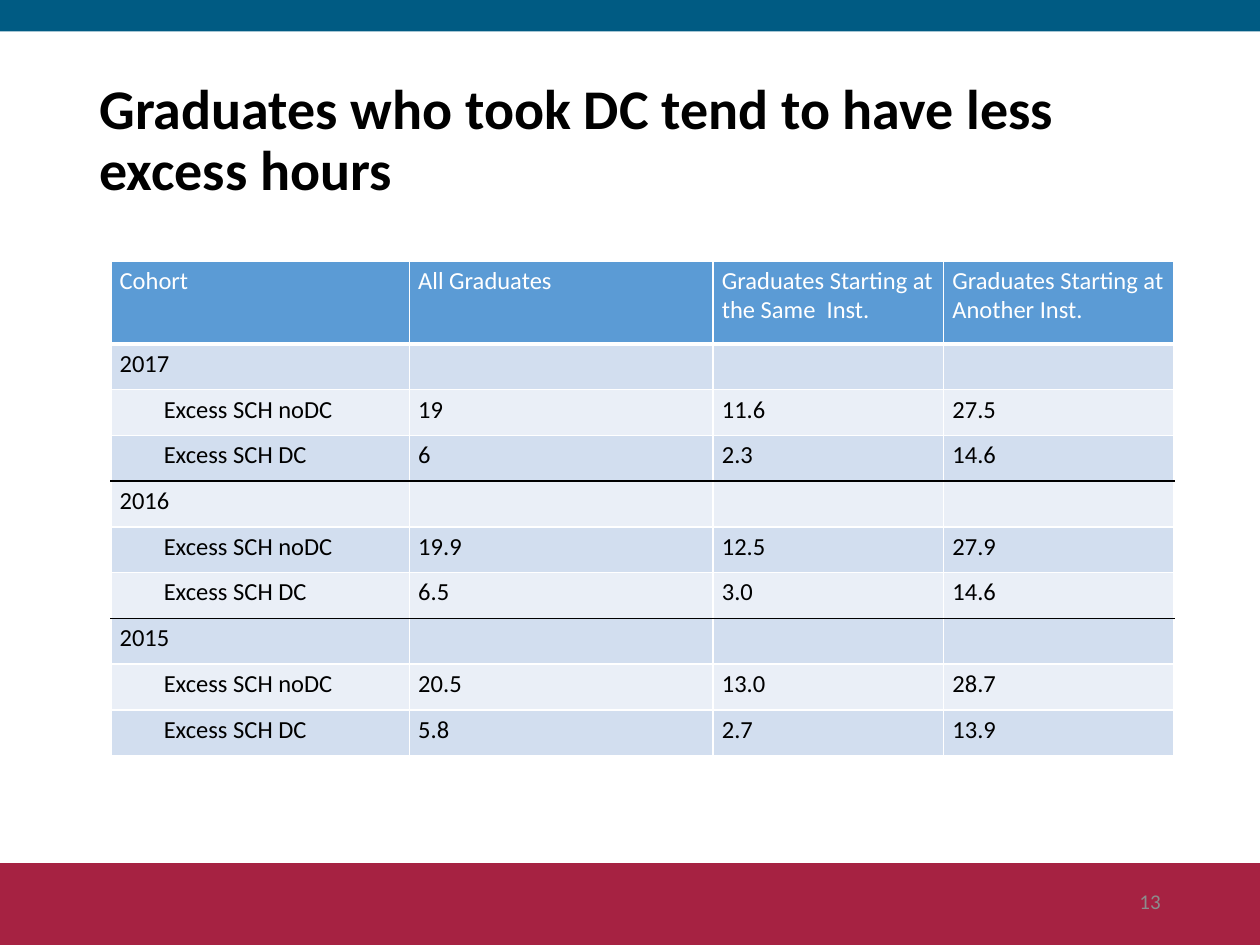
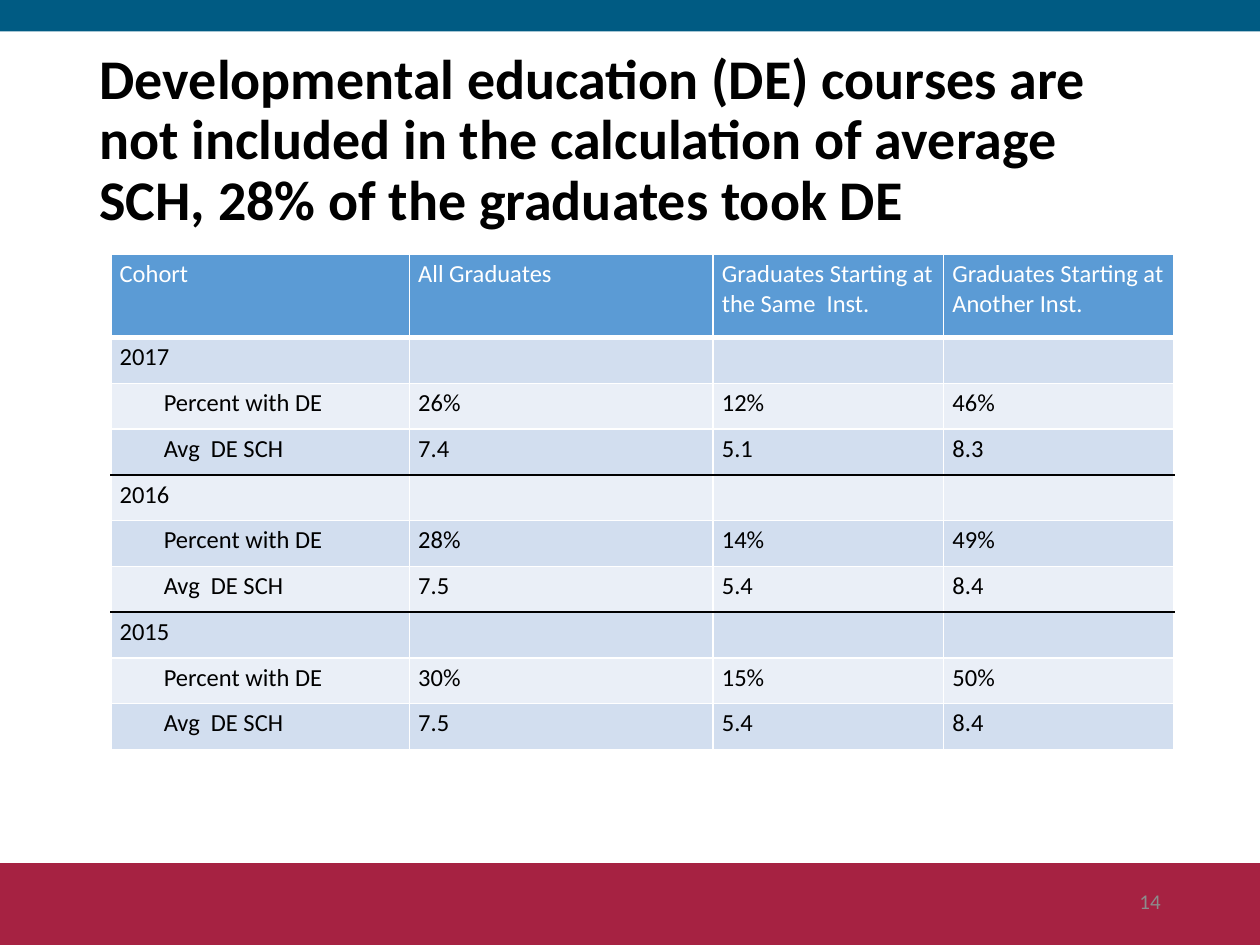
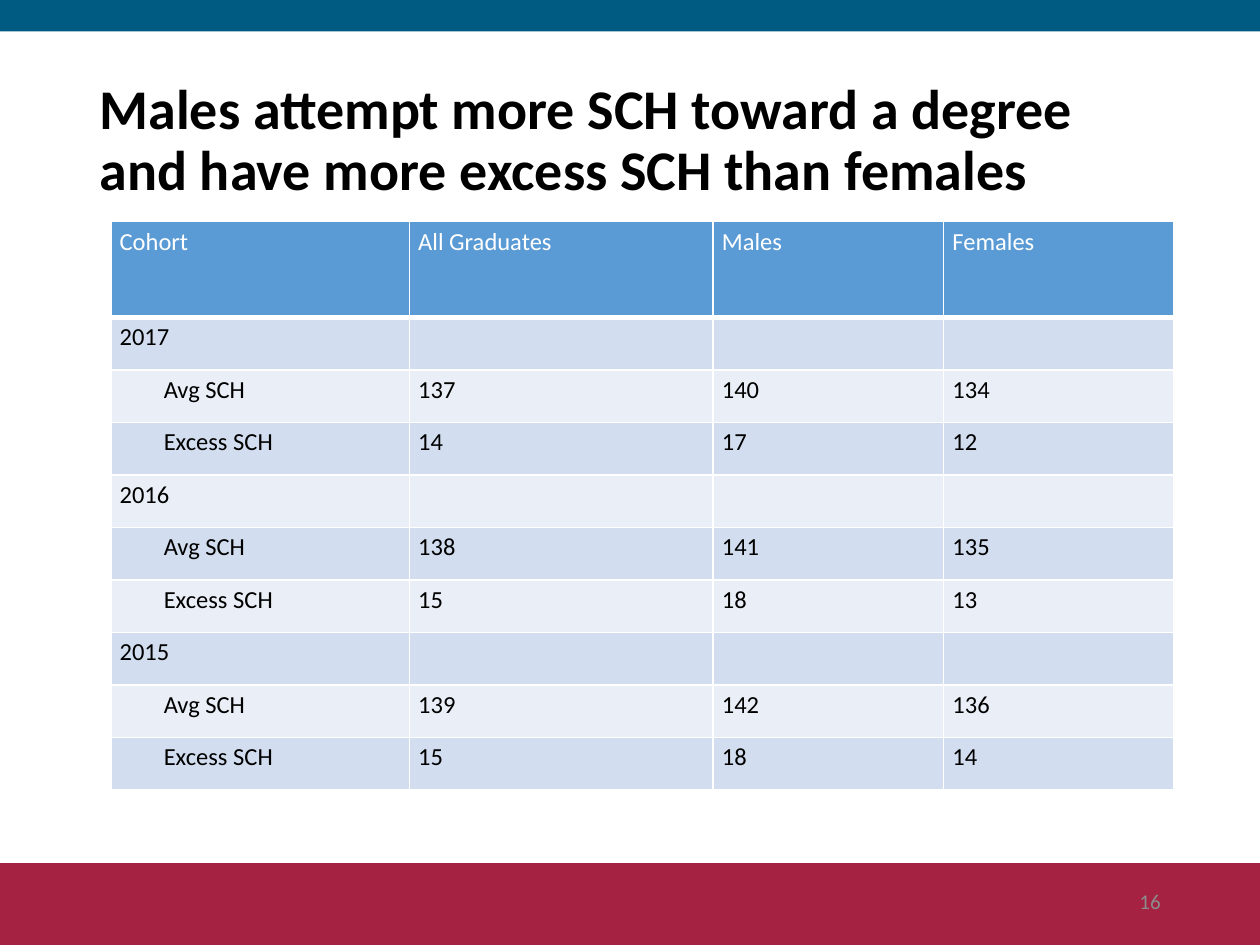
import pptx
import pptx.dml.color
import pptx.enum.shapes
import pptx.enum.text
import pptx.oxml
import pptx.oxml.ns
import pptx.util

Inches = pptx.util.Inches
Pt = pptx.util.Pt
ALIGN = pptx.enum.text.PP_ALIGN
MIDDLE = pptx.enum.text.MSO_ANCHOR.MIDDLE

BLACK, WHITE, GREY = "000000", "FFFFFF", "8C8C8C"
TEAL, CRIMSON = "005B83", "A62242"
HEADER_BLUE, DARK_BAND, LIGHT_BAND = "5B9BD5", "D2DEEF", "EAEFF7"

COLUMN_WIDTHS = [2.37, 2.41, 1.83, 1.83]
COHORTS = ["2017", "2016", "2015"]
COHORT_STARTS = (4, 7)
INSTITUTIONS = ["Graduates Starting at the Same  Inst.", "Graduates Starting at Another Inst."]

SLIDES = [
    {
        "title": "Graduates who took DC tend to have less excess hours",
        "number": "13", "top": 2.07, "height": 3.93, "header_height": 0.66, "ruled": True,
        "groups": INSTITUTIONS,
        "measures": ["Excess SCH noDC", "Excess SCH DC"],
        "values": [["19", "11.6", "27.5"], ["6", "2.3", "14.6"],
                   ["19.9", "12.5", "27.9"], ["6.5", "3.0", "14.6"],
                   ["20.5", "13.0", "28.7"], ["5.8", "2.7", "13.9"]],
    },
    {
        "title": "Developmental education (DE) courses are not included in the calculation "
                 "of average SCH, 28% of the graduates took DE",
        "number": "14", "top": 2.02, "height": 3.93, "header_height": 0.66, "ruled": True,
        "groups": INSTITUTIONS,
        "measures": ["Percent with DE", "Avg  DE SCH"],
        "values": [["26%", "12%", "46%"], ["7.4", "5.1", "8.3"],
                   ["28%", "14%", "49%"], ["7.5", "5.4", "8.4"],
                   ["30%", "15%", "50%"], ["7.5", "5.4", "8.4"]],
    },
    {
        "title": "Males attempt more SCH toward a degree and have more excess SCH than females",
        "number": "16", "top": 1.76, "height": 4.51, "header_height": 0.76, "ruled": False,
        "groups": ["Males", "Females"],
        "measures": ["Avg SCH", "Excess SCH"],
        "values": [["137", "140", "134"], ["14", "17", "12"],
                   ["138", "141", "135"], ["15", "18", "13"],
                   ["139", "142", "136"], ["15", "18", "14"]],
    },
]


def color(hex_string):
    return pptx.dml.color.RGBColor.from_string(hex_string)


def write(frame, text, size=14, fill=BLACK, bold=False, align=ALIGN.LEFT, spacing=None, indent=0):
    frame.word_wrap = True
    paragraph = frame.paragraphs[0]
    paragraph.alignment = align
    paragraph.line_spacing = spacing
    if indent:
        paragraph._p.get_or_add_pPr().set("marL", str(Inches(indent)))
    if not text:
        paragraph._p.get_or_add_endParaRPr().set("sz", str(size * 100))
        return
    run = paragraph.add_run()
    run.text = text
    run.font.name = "Calibri"
    run.font.size = Pt(size)
    run.font.bold = bold
    run.font.color.rgb = color(fill)


deck = pptx.Presentation()
deck.slide_width, deck.slide_height = Inches(10), Inches(7.5)

for content in SLIDES:
    slide = deck.slides.add_slide(deck.slide_layouts[5])

    for band_top, band_height, band_color in [(6.85, 0.67, CRIMSON), (0, 0.25, TEAL)]:
        band = slide.shapes.add_shape(
            pptx.enum.shapes.MSO_SHAPE.RECTANGLE, 0, Inches(band_top), Inches(10), Inches(band_height))
        band.shadow.inherit = False
        band.fill.solid()
        band.fill.fore_color.rgb = color(band_color)
        band.line.fill.background()

    title = slide.shapes.title
    title.left, title.top, title.width, title.height = map(Inches, (0.69, 0.4, 8.62, 1.45))
    title.text_frame.auto_size = pptx.enum.text.MSO_AUTO_SIZE.NONE
    title.text_frame.vertical_anchor = MIDDLE
    write(title.text_frame, content["title"], size=32, bold=True, spacing=0.9)

    rows = [["Cohort", "All Graduates"] + content["groups"]]
    for position, cohort in enumerate(COHORTS):
        rows.append([cohort, "", "", ""])
        for offset, measure in enumerate(content["measures"]):
            rows.append([measure] + content["values"][2 * position + offset])

    cohorts = slide.shapes.add_table(
        len(rows), len(COLUMN_WIDTHS), Inches(0.88), Inches(content["top"]),
        Inches(sum(COLUMN_WIDTHS)), Inches(content["height"])).table
    for column, width in zip(cohorts.columns, COLUMN_WIDTHS):
        column.width = Inches(width)
    body_height = (content["height"] - content["header_height"]) / (len(rows) - 1)

    for r, row in enumerate(rows):
        is_header = r == 0
        cohorts.rows[r].height = Inches(content["header_height"] if is_header else body_height)
        top_color, bottom_color = (
            BLACK if content["ruled"] and edge in COHORT_STARTS else WHITE for edge in (r, r + 1))
        borders = [("lnL", WHITE, 1), ("lnR", WHITE, 1), ("lnT", top_color, 1),
                   ("lnB", bottom_color, 3 if is_header else 1)]
        for c, text in enumerate(row):
            cell = cohorts.cell(r, c)
            cell.margin_left = cell.margin_right = Inches(0.07)
            cell.margin_top = cell.margin_bottom = Inches(0.04)
            is_measure = c == 0 and text in content["measures"]
            write(cell.text_frame, text, fill=WHITE if is_header else BLACK,
                  indent=0.35 if is_measure else 0)
            for side, border_color, points in borders:
                cell._tc.get_or_add_tcPr().append(pptx.oxml.parse_xml(
                    f'<a:{side} {pptx.oxml.ns.nsdecls("a")} w="{Pt(points)}"><a:solidFill>'
                    f'<a:srgbClr val="{border_color}"/></a:solidFill></a:{side}>'))
            cell.fill.solid()
            cell.fill.fore_color.rgb = color(
                HEADER_BLUE if is_header else DARK_BAND if r % 2 else LIGHT_BAND)

    number = slide.shapes.add_textbox(Inches(7.06), Inches(6.95), Inches(2.25), Inches(0.4))
    number.text_frame.vertical_anchor = MIDDLE
    write(number.text_frame, content["number"], size=12, fill=GREY, align=ALIGN.RIGHT)

deck.save("out.pptx")
